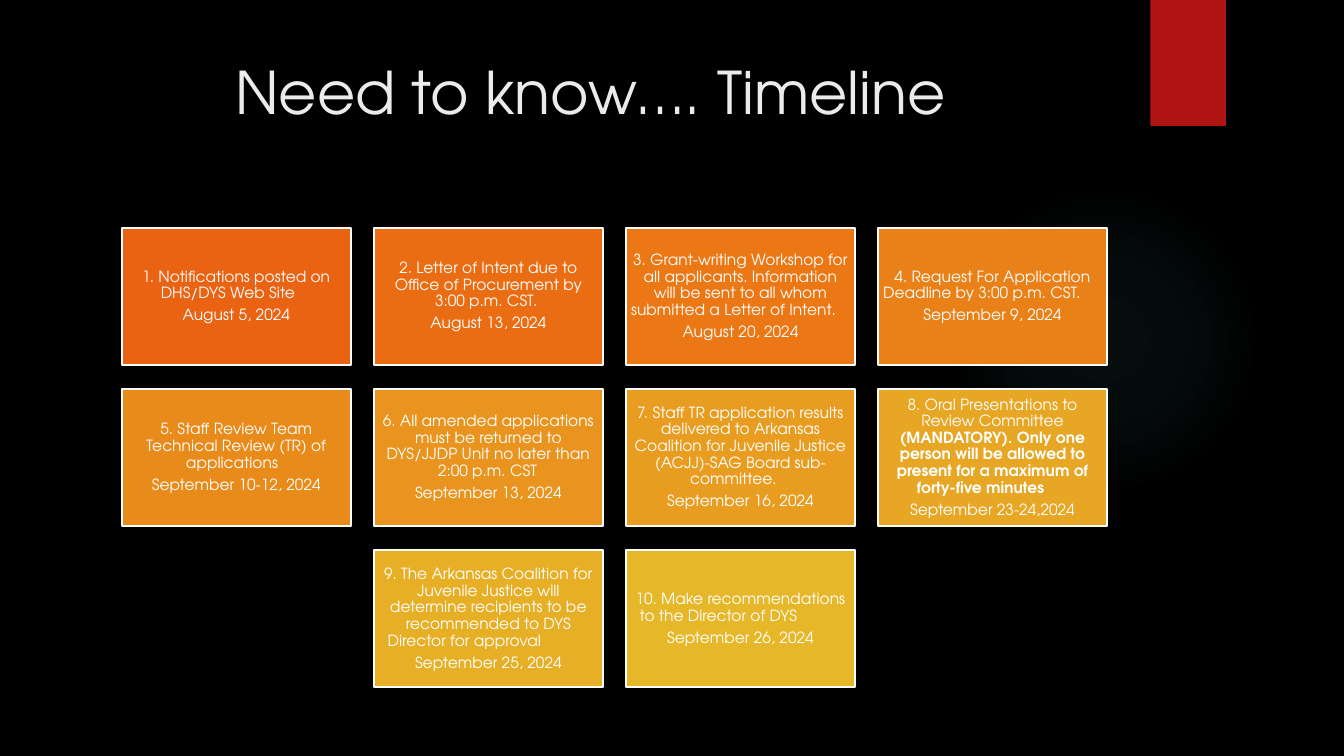
import pptx
import pptx.util
import pptx.dml.color
import pptx.enum.shapes
import pptx.enum.text
import pptx.oxml
import pptx.oxml.ns

TITLE = "Need to know…. Timeline"
# Each step: fill, plain wording, bold wording, date
ROWS = [
    [
        ("EA6312", "1. Notifications posted on DHS/DYS Web Site \t", "", "August 5, 2024"),
        ("EB6D13", "2. Letter of Intent due to Office of Procurement by 3:00 p.m. CST. ", "",
         "August 13, 2024"),
        ("EB7715", "3. Grant-writing Workshop for all applicants. Information will be sent "
         "to all whom submitted a Letter of Intent. \t", "", "August 20, 2024"),
        ("EA8118", "4. Request For Application Deadline by 3:00 p.m. CST. \t", "",
         "September 9, 2024"),
    ],
    [
        ("E98B1B", "5. Staff Review Team Technical Review (TR) of applications \t", "",
         "September 10-12, 2024"),
        ("E9941E", "6. All amended applications must be returned to DYS/JJDP Unit "
         "no later than 2:00 p.m. CST\t", "", "September 13, 2024"),
        ("E89D21", "7. Staff TR application results delivered to Arkansas Coalition for "
         "Juvenile Justice (ACJJ)-SAG Board sub-committee. \t", "", "September 16, 2024"),
        ("E7A623", "8. Oral Presentations to Review Committee ",
         "(MANDATORY). Only one person will be allowed to present for a maximum of "
         "forty-five minutes \t", "September 23-24,2024"),
    ],
    [
        ("E7AF26", "9. The Arkansas Coalition for Juvenile Justice will determine recipients "
         "to be recommended to DYS Director for approval \t", "", "September 25, 2024"),
        ("E6B729", "10. Make recommendations to the Director of DYS \t", "",
         "September 26, 2024"),
    ],
]
FONT = "TeX Gyre Adventor"
COLUMNS = 4
GRID_LEFT, GRID_TOP = 1.21, 2.26
CARD_WIDTH, CARD_HEIGHT = 2.27, 1.36
COLUMN_STEP, ROW_STEP = 2.5, 1.6
GLOW_STOPS = [(0, 7), (36, 6), (69, 0)]  # position and opacity in percent

Inches, Pt = pptx.util.Inches, pptx.util.Pt
SHAPES = pptx.enum.shapes.MSO_SHAPE
ANCHOR = pptx.enum.text.MSO_ANCHOR
CENTER = pptx.enum.text.PP_ALIGN.CENTER


def rgb(value):
    return pptx.dml.color.RGBColor.from_string(value)


def apply(target, **values):
    for name, value in values.items():
        setattr(target, name, value)


def add_span(para, text, size, color, bold=False):
    span = para.add_run()
    span.text = text
    apply(span.font, name=FONT, size=Pt(size), bold=bold)
    span.font.color.rgb = rgb(color)


def add_block(page, kind, box, fill=None):
    """Add a borderless, shadowless shape; box is left, top, width, height in inches."""
    block = page.shapes.add_shape(kind, *map(Inches, box))
    block.shadow.inherit = False
    block.line.fill.background()
    if fill:
        block.fill.solid()
        block.fill.fore_color.rgb = rgb(fill)
    return block


def add_glow(page):
    glow = add_block(page, SHAPES.OVAL, (9.41, 1.83, 3.08, 3.08))
    stops = "".join(
        f'<a:gs pos="{place * 1000}"><a:srgbClr val="50B9C1">'
        f'<a:alpha val="{opacity * 1000}"/></a:srgbClr></a:gs>'
        for place, opacity in GLOW_STOPS)
    gradient = pptx.oxml.parse_xml(
        f'<a:gradFill {pptx.oxml.ns.nsdecls("a")}><a:gsLst>{stops}</a:gsLst>'
        '<a:path path="circle"><a:fillToRect l="50000" t="50000" r="50000" b="50000"/>'
        '</a:path></a:gradFill>')
    glow._element.spPr.find(pptx.oxml.ns.qn("a:prstGeom")).addnext(gradient)


def add_ribbon(page):
    ribbon = add_block(page, SHAPES.RECTANGLE, (11.41, 0, 0.75, 1.25), "B01513")
    shadow = pptx.oxml.parse_xml(
        f'<a:outerShdw {pptx.oxml.ns.nsdecls("a")} blurRad="{Pt(3)}" dist="{Pt(2)}" '
        'dir="5400000" rotWithShape="0"><a:srgbClr val="000000">'
        '<a:alpha val="45000"/></a:srgbClr></a:outerShdw>')
    ribbon._element.spPr.find(pptx.oxml.ns.qn("a:effectLst")).append(shadow)


def add_title(page):
    title = page.shapes.title
    apply(title, left=Inches(0.71), top=Inches(0.5), width=Inches(10.29), height=Inches(1.53))
    apply(title.text_frame, word_wrap=True, vertical_anchor=ANCHOR.TOP,
          auto_size=pptx.enum.text.MSO_AUTO_SIZE.NONE)
    para = title.text_frame.paragraphs[0]
    para.alignment = CENTER
    add_span(para, TITLE, 42, "EBEBEB")


def add_card(page, left, top, step):
    fill, wording, strong, date = step
    card = add_block(page, SHAPES.RECTANGLE, (left, top, CARD_WIDTH, CARD_HEIGHT), fill)
    card.line.color.rgb = rgb("FFFFFF")
    card.line.width = Pt(1.5)
    frame = card.text_frame
    inset = Inches(0.05)
    apply(frame, word_wrap=True, vertical_anchor=ANCHOR.MIDDLE, margin_left=inset,
          margin_right=inset, margin_top=inset, margin_bottom=inset)
    for para, spans in ((frame.paragraphs[0], [(wording, False), (strong, True)]),
                        (frame.add_paragraph(), [(date, False)])):
        apply(para, alignment=CENTER, line_spacing=0.9, space_after=Pt(3.85))
        for text, bold in spans:
            if text:
                add_span(para, text, 11, "FFFFFF", bold)


def main():
    deck = pptx.Presentation()
    apply(deck, slide_width=Inches(13.33), slide_height=Inches(7.5))
    page = deck.slides.add_slide(deck.slide_layouts.get_by_name("Title Only"))
    page.background.fill.solid()
    page.background.fill.fore_color.rgb = rgb("000000")
    add_glow(page)
    add_ribbon(page)
    add_title(page)
    for row, steps in enumerate(ROWS):
        first = (COLUMNS - len(steps)) / 2  # a short row is centred
        for column, step in enumerate(steps):
            add_card(page, GRID_LEFT + (first + column) * COLUMN_STEP,
                     GRID_TOP + row * ROW_STEP, step)
    deck.save("out.pptx")


if __name__ == "__main__":
    main()
